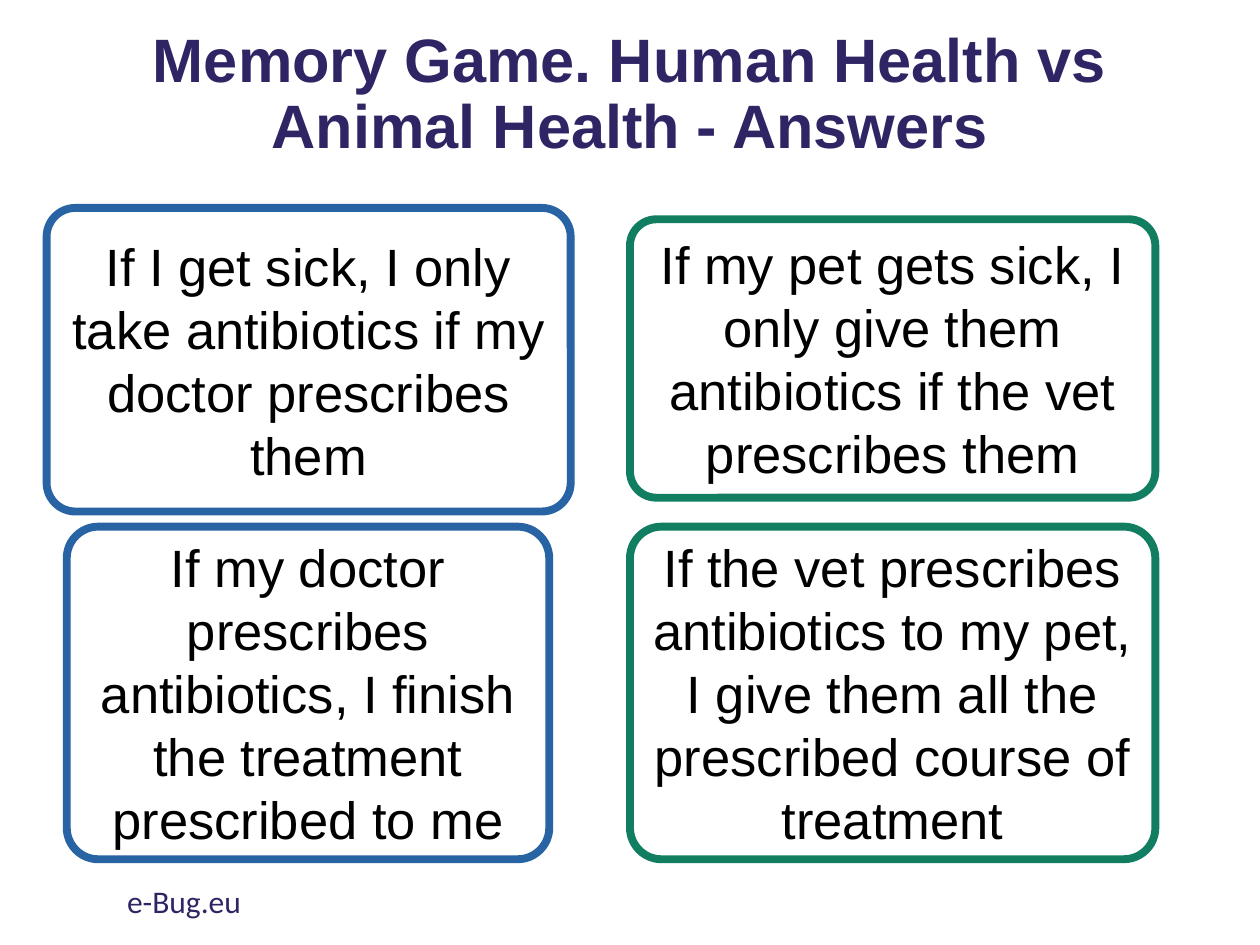
from pptx import Presentation
from pptx.dml.color import RGBColor
from pptx.enum.shapes import MSO_SHAPE
from pptx.enum.text import MSO_ANCHOR, MSO_AUTO_SIZE, PP_ALIGN
from pptx.util import Inches, Pt

INDIGO = RGBColor(0x30, 0x25, 0x64)
BLUE = RGBColor(0x28, 0x63, 0xA4)
GREEN = RGBColor(0x11, 0x7E, 0x62)
BLACK = RGBColor(0x00, 0x00, 0x00)

CARDS = [
    ((0.37, 1.65, 4.16, 2.41), BLUE,
     ["If I get sick, I only take antibiotics if my doctor prescribes them"]),
    ((5, 1.74, 4.17, 2.21), GREEN,
     ["If my pet gets sick, I only give them antibiotics if the vet prescribes them"]),
    ((0.53, 4.18, 3.83, 2.64), BLUE,
     ["If my doctor prescribes antibiotics, I finish the treatment prescribed to me"]),
    ((5, 4.18, 4.17, 2.64), GREEN,
     ["If the vet prescribes", "antibiotics to my pet,", "I give them all the",
      "prescribed course of", "treatment"]),
]


class SlideBuilder:
    """Holds the text styles and the current slide, and adds each kind of element."""

    styles = {
        "title": {"name": "Arial", "size": Pt(35), "bold": True, "color": INDIGO},
        "card": {"name": "Arial", "size": Pt(30), "color": BLACK},
        "footer": {"name": "Calibri", "size": Pt(18), "color": INDIGO},
    }

    def __init__(self, deck):
        self.slide = deck.slides.add_slide(deck.slide_layouts[5])

    def fill_text(self, shape, lines, style, alignment, anchor):
        frame = shape.text_frame
        settings = {"word_wrap": True, "auto_size": MSO_AUTO_SIZE.NONE,
                    "vertical_anchor": anchor}
        for name, value in settings.items():
            setattr(frame, name, value)
        frame.text = "\n".join(lines)
        for para in frame.paragraphs:
            para.alignment = alignment
            for span in para.runs:
                for name, value in self.styles[style].items():
                    if name == "color":
                        span.font.color.rgb = value
                    else:
                        setattr(span.font, name, value)

    def title(self, bounds, text):
        title = self.slide.shapes.title
        for name, value in zip(("left", "top", "width", "height"), bounds):
            setattr(title, name, Inches(value))
        self.fill_text(title, [text], "title", PP_ALIGN.CENTER, MSO_ANCHOR.MIDDLE)
        title.text_frame.paragraphs[0].line_spacing = 0.9

    def card(self, bounds, color, lines):
        card = self.slide.shapes.add_shape(
            MSO_SHAPE.ROUNDED_RECTANGLE, *map(Inches, bounds))
        card.adjustments[0] = 0.095
        card.shadow.inherit = False
        card.fill.background()
        card.line.color.rgb = color
        card.line.width = Pt(4.5)
        self.fill_text(card, lines, "card", PP_ALIGN.CENTER, MSO_ANCHOR.MIDDLE)

    def footer(self, bounds, text):
        box = self.slide.shapes.add_textbox(*map(Inches, bounds))
        self.fill_text(box, [text], "footer", PP_ALIGN.LEFT, MSO_ANCHOR.TOP)


def main():
    deck = Presentation()
    deck.slide_width, deck.slide_height = Inches(10), Inches(7.5)
    builder = SlideBuilder(deck)
    builder.title((0.7, 0.36, 8.6, 0.8),
                  "Memory Game. Human Health vs Animal Health - Answers")
    for bounds, color, lines in CARDS:
        builder.card(bounds, color, lines)
    builder.footer((0.91, 6.95, 3.38, 0.4), "e-Bug.eu")
    deck.save("out.pptx")


if __name__ == "__main__":
    main()
